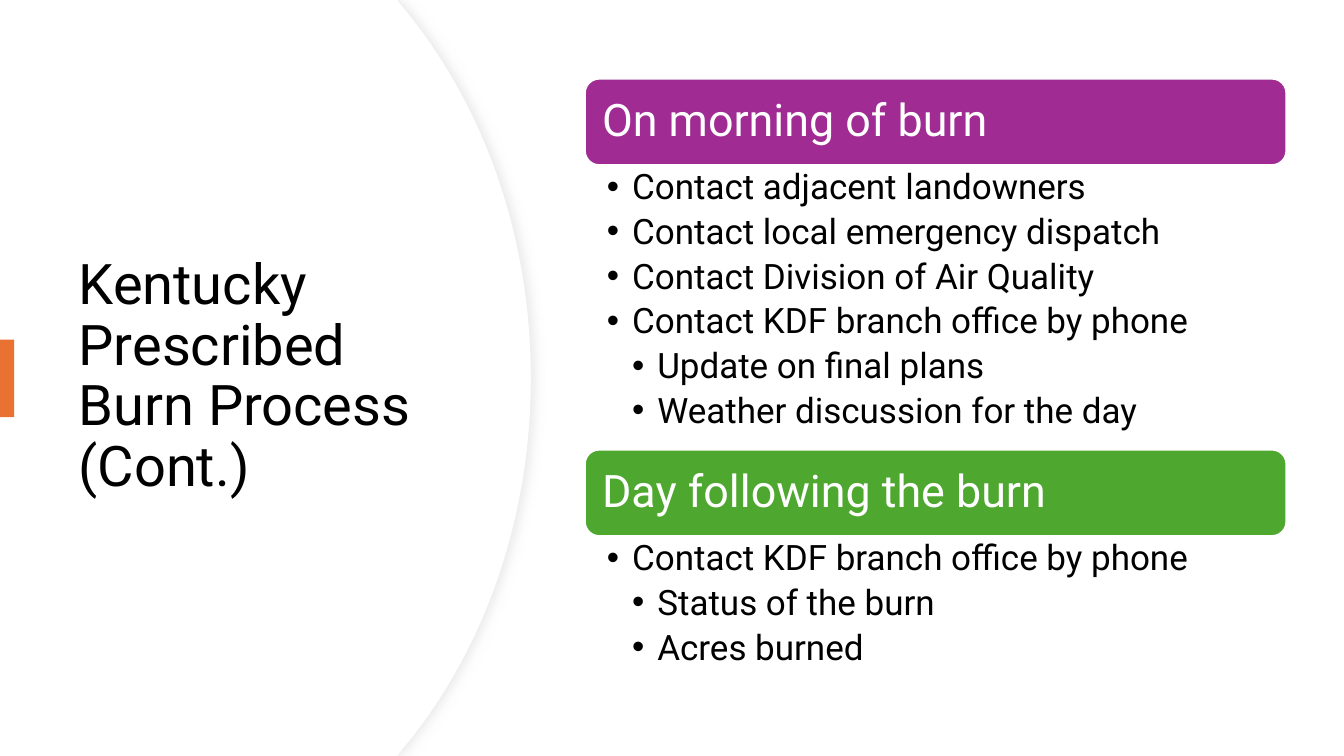
from lxml.etree import SubElement
from pptx import Presentation
from pptx.dml.color import RGBColor
from pptx.enum.shapes import MSO_SHAPE
from pptx.enum.text import MSO_ANCHOR, MSO_AUTO_SIZE, PP_ALIGN
from pptx.oxml.ns import qn
from pptx.util import Inches, Pt

FONT = "Roboto"
COLORS = {
    "white": "FFFFFF",
    "black": "000000",
    "edge": "EFEFEF",
    "shadow": "D9D9D9",
    "orange": "E97132",
    "purple": "A02B93",
    "green": "4EA72E",
}
SLIDE_HEIGHT = 7.5
LIST_LEFT, LIST_WIDTH, HEADER_HEIGHT = 5.8, 6.96, 0.86
INDENT = 0.25

# Each section: top, list height, colour, heading, (level, item) pairs
SECTIONS = [
    (0.78, 2.83, "purple", "On morning of burn", [
        (1, "Contact adjacent landowners"),
        (1, "Contact local emergency dispatch"),
        (1, "Contact Division of Air Quality"),
        (1, "Contact KDF branch office by phone"),
        (2, "Update on final plans"),
        (2, "Weather discussion for the day"),
    ]),
    (4.46, 1.41, "green", "Day following the burn", [
        (1, "Contact KDF branch office by phone"),
        (2, "Status of the burn"),
        (2, "Acres burned"),
    ]),
]


def color(name):
    return RGBColor.from_string(COLORS[name])


def paint(shape, fill, line=None, width=0):
    shape.shadow.inherit = False
    shape.fill.solid()
    shape.fill.fore_color.rgb = color(fill)
    if line:
        shape.line.color.rgb = color(line)
        shape.line.width = Pt(width)
    else:
        shape.line.fill.background()


def format_para(para, size, font_color):
    para.alignment = PP_ALIGN.LEFT
    para.line_spacing = 0.9
    for span in para.runs:
        span.font.name = FONT
        span.font.size = Pt(size)
        span.font.color.rgb = color(font_color)


def set_frame(frame, anchor, left, top, right, bottom):
    frame.word_wrap = True
    frame.auto_size = MSO_AUTO_SIZE.NONE
    frame.vertical_anchor = anchor
    frame.margin_left, frame.margin_top = Inches(left), Inches(top)
    frame.margin_right, frame.margin_bottom = Inches(right), Inches(bottom)


def bend(segment, controls):
    """Turn a straight outline segment into a cubic curve."""
    end = segment[0]
    segment.tag = qn("a:cubicBezTo")
    for x, y in controls:
        point = SubElement(segment, qn("a:pt"), x=str(Inches(x)), y=str(Inches(y)))
        end.addprevious(point)


def add_panel(slide, right, line=None, width=0):
    shoulder = right - 1.26
    upper = [(3.94, 0), (shoulder, 0.08), (right, SLIDE_HEIGHT / 2)]
    lower = [(x, SLIDE_HEIGHT - y) for x, y in reversed(upper[:-1])]
    corners = upper + lower + [(0, SLIDE_HEIGHT)]
    builder = slide.shapes.build_freeform(0, 0)
    builder.add_line_segments([(Inches(x), Inches(y)) for x, y in corners])
    panel = builder.convert_to_shape()

    # The third and fourth segments form the bulge
    segments = list(panel.element.iter(qn("a:lnTo")))
    controls = [(right - 0.48, 1.02), (right, 2.32)]
    bend(segments[2], controls)
    bend(segments[3], [(x, SLIDE_HEIGHT - y) for x, y in reversed(controls)])
    paint(panel, "white", line, width)
    return panel


def add_shadow(shape):
    effects = shape.element.spPr.find(qn("a:effectLst"))
    shadow = SubElement(effects, qn("a:outerShdw"), blurRad=str(Pt(7)),
                        dist=str(Pt(3)), dir="0", algn="l", rotWithShape="0")
    tint = SubElement(shadow, qn("a:srgbClr"), val=COLORS["shadow"])
    SubElement(tint, qn("a:alpha"), val="50000")


def add_title(slide, text):
    title = slide.shapes.title
    title.left, title.top = Inches(0.68), Inches(1.27)
    title.width, title.height = Inches(3.94), Inches(4.95)
    title.text_frame.text = text
    set_frame(title.text_frame, MSO_ANCHOR.MIDDLE, 0.1, 0.05, 0.1, 0.05)
    format_para(title.text_frame.paragraphs[0], 40, "black")
    # Bring the title in front of the panel
    title.element.getparent().append(title.element)


def add_header(slide, top, fill, text):
    header = slide.shapes.add_shape(
        MSO_SHAPE.ROUNDED_RECTANGLE, Inches(LIST_LEFT), Inches(top),
        Inches(LIST_WIDTH), Inches(HEADER_HEIGHT))
    paint(header, fill, "white", 1.5)
    header.text_frame.text = text
    set_frame(header.text_frame, MSO_ANCHOR.MIDDLE, 0.13, 0.13, 0.13, 0.13)
    format_para(header.text_frame.paragraphs[0], 32, "white")


def add_bullet(para, level):
    properties = para._p.get_or_add_pPr()
    properties.set("marL", str(Inches(INDENT * level)))
    properties.set("indent", str(-Inches(INDENT)))
    SubElement(properties, qn("a:buFont"), typeface="Arial")
    SubElement(properties, qn("a:buChar"), char="•")


def add_list(slide, top, height, items):
    box = slide.shapes.add_textbox(Inches(LIST_LEFT), Inches(top),
                                   Inches(LIST_WIDTH), Inches(height))
    frame = box.text_frame
    set_frame(frame, MSO_ANCHOR.TOP, 0.22, 0.04, 0.25, 0.04)
    frame.text = "\n".join(text for _, text in items)
    for para, (level, _) in zip(frame.paragraphs, items):
        para.level = level
        para.space_after = Pt(5)
        format_para(para, 25, "black")
        add_bullet(para, level)


def main():
    deck = Presentation()
    deck.slide_width, deck.slide_height = Inches(13.33), Inches(SLIDE_HEIGHT)
    slide = deck.slides.add_slide(deck.slide_layouts[5])

    # Curved title panel with accent bar
    add_shadow(add_panel(slide, 5.27, "edge", 0.75))
    add_panel(slide, 5.26)
    add_title(slide, "Kentucky Prescribed Burn Process (Cont.)")
    accent = slide.shapes.add_shape(MSO_SHAPE.RECTANGLE, 0, Inches(3.37),
                                    Inches(0.14), Inches(0.77))
    paint(accent, "orange")

    # Headed lists
    for top, height, fill, heading, items in SECTIONS:
        add_header(slide, top, fill, heading)
        add_list(slide, top + HEADER_HEIGHT, height, items)

    deck.save("out.pptx")


if __name__ == "__main__":
    main()
